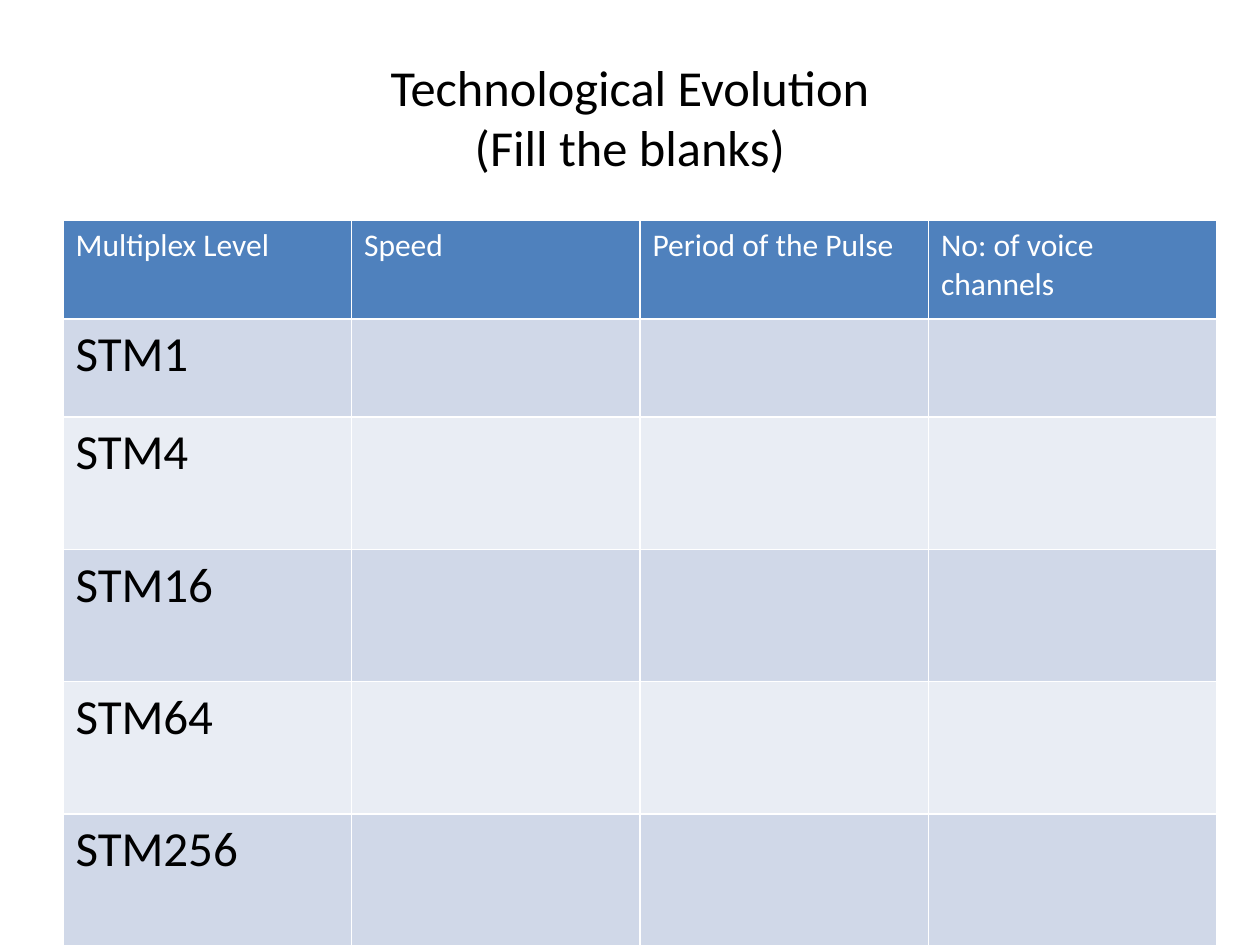
from pptx import Presentation, util as u
from pptx.dml.color import RGBColor
from pptx.enum import text

WHITE = RGBColor(0xFF, 0xFF, 0xFF)
BLACK = RGBColor(0x00, 0x00, 0x00)
HEADER = RGBColor(0x4F, 0x81, 0xBD)
BANDS = [RGBColor(0xE9, 0xED, 0xF4), RGBColor(0xD0, 0xD8, 0xE8)]

HEADINGS = ["Multiplex Level", "Speed", "Period of the Pulse", "No: of voice channels"]
LEVELS = ["STM1", "STM4", "STM16", "STM64", "STM256"]
ROW_HEIGHTS = [0.78] * 2 + [1.05] * 4
COLUMN_WIDTH = 2.29

deck = Presentation()
deck.slide_width, deck.slide_height = u.Inches(10), u.Inches(7.5)
page = deck.slides.add_slide(deck.slide_layouts[6])


def style(para, size, color):
    para.font.name = "Calibri"
    para.font.size = u.Pt(size)
    para.font.bold = False
    para.font.color.rgb = color


box = page.shapes.add_textbox(u.Inches(0.5), u.Inches(0.3), u.Inches(9), u.Inches(1.25))
frame = box.text_frame
frame.word_wrap = True
frame.vertical_anchor = text.MSO_ANCHOR.MIDDLE
frame.text = "Technological Evolution\n(Fill the blanks)"
for para in frame.paragraphs:
    para.alignment = text.PP_ALIGN.CENTER
    style(para, 28.8, BLACK)

rows = [HEADINGS] + [[level, "", "", ""] for level in LEVELS]
table = page.shapes.add_table(
    len(rows), len(HEADINGS), u.Inches(0.5), u.Inches(1.75),
    u.Inches(COLUMN_WIDTH * len(HEADINGS)), u.Inches(sum(ROW_HEIGHTS))).table
for column in table.columns:
    column.width = u.Inches(COLUMN_WIDTH)
for r, (values, height) in enumerate(zip(rows, ROW_HEIGHTS)):
    table.rows[r].height = u.Inches(height)
    for c, value in enumerate(values):
        cell = table.cell(r, c)
        cell.text = value
        cell.fill.solid()
        cell.fill.fore_color.rgb = BANDS[r % 2] if r else HEADER
        style(cell.text_frame.paragraphs[0], 28 if r else 18, BLACK if r else WHITE)

deck.save("out.pptx")
